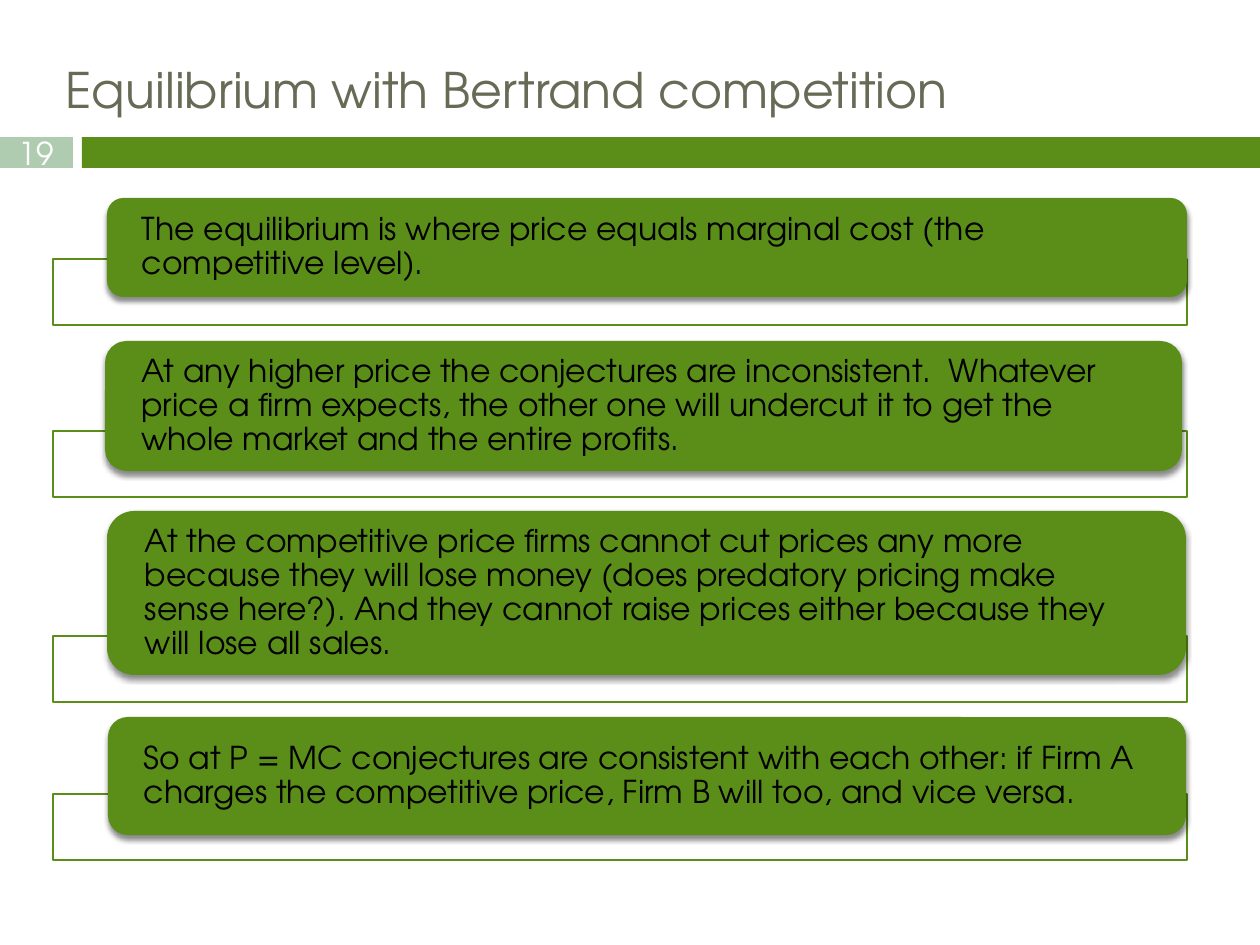
from dataclasses import dataclass

from lxml.etree import SubElement
from pptx import Presentation
from pptx.dml.color import RGBColor
from pptx.enum.shapes import MSO_SHAPE as Shape
from pptx.enum.text import MSO_ANCHOR as Anchor, MSO_AUTO_SIZE as AutoSize, PP_ALIGN as Align
from pptx.oxml.ns import qn
from pptx.util import Emu, Pt

EMU_PER_PX = 914400 / 126


@dataclass(frozen=True)
class Theme:
    font: str = "TeX Gyre Adventor"
    green: str = "5A8E19"
    pale: str = "B0CCB0"
    white: str = "FFFFFF"
    black: str = "000000"
    title: str = "676A55"
    title_size: int = 28
    body_size: int = 18


@dataclass(frozen=True)
class Point:
    text: str
    left: int
    top: int
    width: int
    height: int
    frame_top: int


THEME = Theme()
FRAME_LEFT, FRAME_WIDTH, FRAME_HEIGHT = 53, 1134, 66
BAND_TOP, BAND_HEIGHT = 137, 31

POINTS = [
    Point("The equilibrium is where price equals marginal cost (the competitive level).",
          107, 198, 1080, 99, 259),
    Point("At any higher price the conjectures are inconsistent.  Whatever price a firm "
          "expects, the other one will undercut it to get the whole market and the "
          "entire profits.", 105, 341, 1077, 130, 431),
    Point("At the competitive price firms cannot cut prices any more because they will "
          "lose money (does predatory pricing make sense here?). And they cannot raise "
          "prices either because they will lose all sales.", 107, 511, 1079, 164, 636),
    Point("So at P = MC conjectures are consistent with each other: if Firm A charges the "
          "competitive price, Firm B will too, and vice versa.", 108, 717, 1078, 118, 794),
]


def px(n: int) -> Emu:
    return Emu(round(n * EMU_PER_PX))


def color(value: str) -> RGBColor:
    return RGBColor.from_string(value)


def add_box(s, kind, left: int, top: int, width: int, height: int, fill: str):
    sp = s.shapes.add_shape(kind, px(left), px(top), px(width), px(height))
    sp.shadow.inherit = False
    sp.fill.solid()
    sp.fill.fore_color.rgb = color(fill)
    sp.line.fill.background()
    return sp


def write(sp, text: str, size: int, text_color: str, align=Align.LEFT,
          anchor=Anchor.MIDDLE):
    tf = sp.text_frame
    tf.text = text
    tf.word_wrap = True
    tf.vertical_anchor = anchor
    p = tf.paragraphs[0]
    p.alignment = align
    font = p.runs[0].font
    font.name, font.size = THEME.font, Pt(size)
    font.color.rgb = color(text_color)
    return tf


def add_shadow(sp) -> None:
    effects = sp._element.spPr.find(qn("a:effectLst"))
    shadow = SubElement(effects, qn("a:outerShdw"), blurRad=str(Pt(3)),
                        dist=str(Pt(2.4)), dir="5400000", rotWithShape="0")
    clr = SubElement(shadow, qn("a:srgbClr"), val=THEME.black)
    SubElement(clr, qn("a:alpha"), val="45000")


def add_point(s, point: Point) -> None:
    # Outlined frame behind the card
    frame = add_box(s, Shape.RECTANGLE, FRAME_LEFT, point.frame_top,
                    FRAME_WIDTH, FRAME_HEIGHT, THEME.white)
    SubElement(frame.fill.fore_color._xFill.srgbClr, qn("a:alpha"), val="90000")
    frame.line.color.rgb = color(THEME.green)
    frame.line.width = Pt(0.79)

    # Rounded card with its text
    card = add_box(s, Shape.ROUNDED_RECTANGLE, point.left, point.top,
                   point.width, point.height, THEME.green)
    add_shadow(card)
    tf = write(card, point.text, THEME.body_size, THEME.black)
    tf.margin_left = tf.margin_right = px(30)
    tf.margin_top = tf.margin_bottom = 0
    tf.paragraphs[0].line_spacing = 0.9


def main() -> None:
    prs = Presentation()
    prs.slide_width, prs.slide_height = px(1260), px(945)
    s = prs.slides.add_slide(prs.slide_layouts[5])

    # Title
    title = s.shapes.title
    title.left, title.top, title.width, title.height = px(53), px(53), px(1239), px(82)
    tf = write(title, "Equilibrium with Bertrand competition", THEME.title_size,
               THEME.title, anchor=Anchor.TOP)
    tf.auto_size = AutoSize.NONE

    # Band and slide number
    add_box(s, Shape.RECTANGLE, 82, BAND_TOP, 1178, BAND_HEIGHT, THEME.green)
    number = add_box(s, Shape.RECTANGLE, 0, BAND_TOP, 73, BAND_HEIGHT, THEME.pale)
    tf = write(number, "19", THEME.body_size, THEME.white, Align.CENTER)
    tf.margin_top = tf.margin_bottom = 0

    # Argument, step by step
    for point in POINTS:
        add_point(s, point)

    prs.save("out.pptx")


if __name__ == "__main__":
    main()
